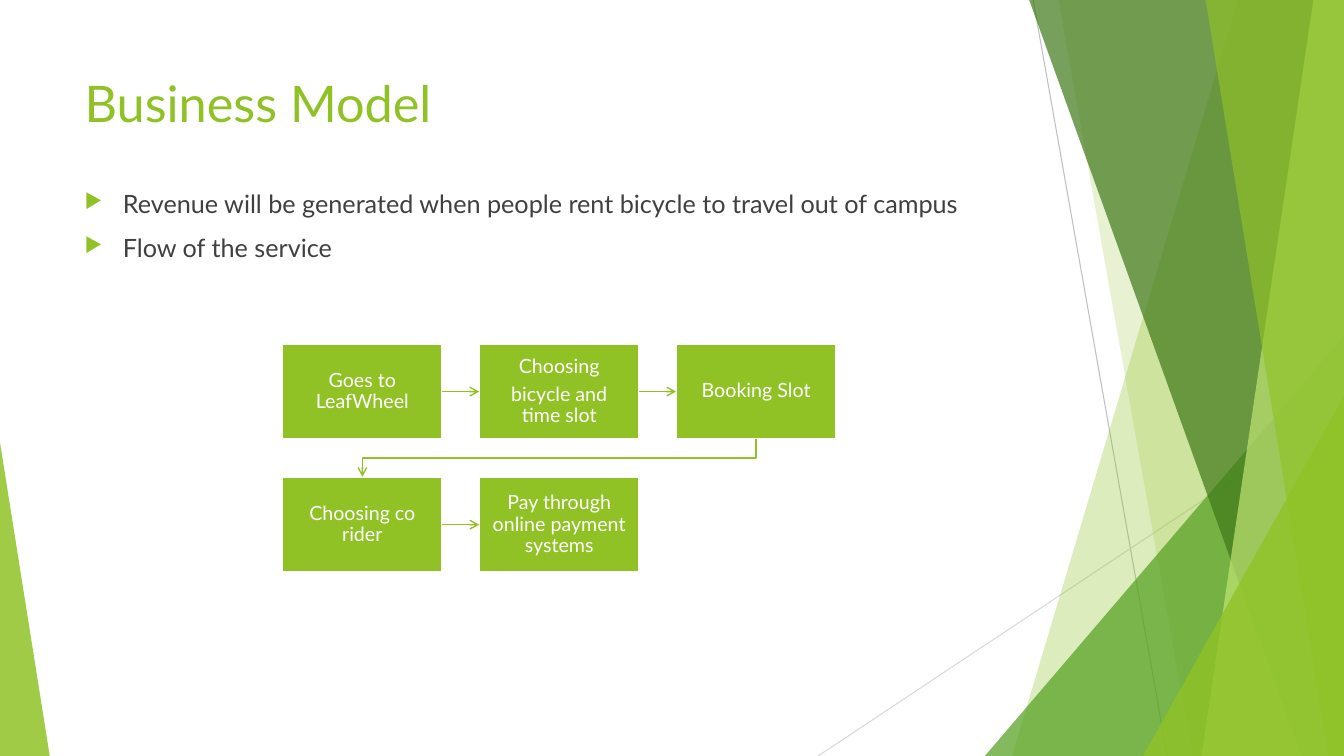
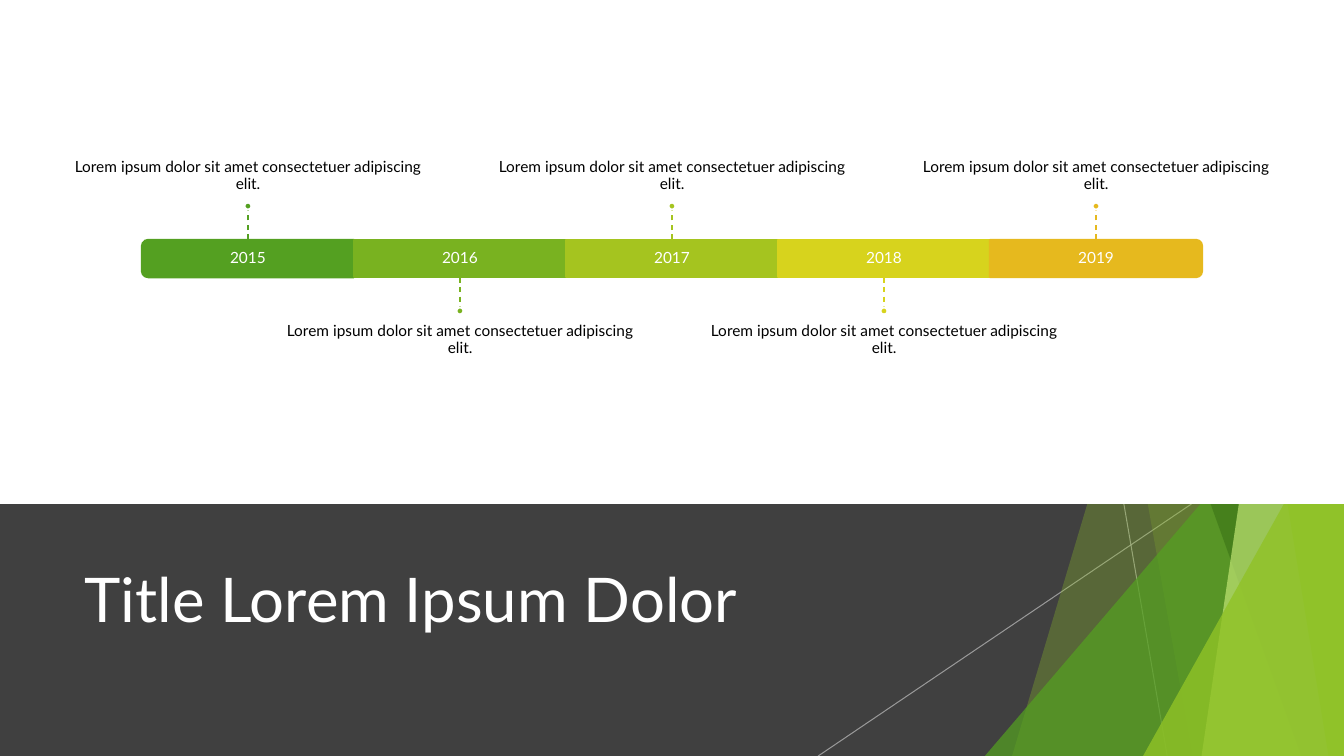
from dataclasses import dataclass
from typing import Optional, Sequence, Union

from lxml.etree import SubElement
from pptx import Presentation
from pptx.dml.color import RGBColor
from pptx.enum.dml import MSO_LINE_DASH_STYLE as Dash
from pptx.enum.shapes import MSO_CONNECTOR as Link, MSO_SHAPE as Form
from pptx.enum.text import MSO_ANCHOR as Anchor, MSO_AUTO_SIZE as AutoSize, PP_ALIGN as Align
from pptx.oxml.ns import qn
from pptx.util import Inches, Pt

SLIDE_WIDTH, SLIDE_HEIGHT = Inches(13.33), Inches(7.5)
COLUMNS, ROWS = 40, 22.5
TITLE_ONLY = 5
FONT = "Lato"

LIME = RGBColor(0x90, 0xC2, 0x26)
GREEN = RGBColor(0x54, 0xA0, 0x21)
FOREST = RGBColor(0x3F, 0x78, 0x19)
PALE_LIME = RGBColor(0xC0, 0xE4, 0x74)
LEAF = RGBColor(0x79, 0xB2, 0x20)
OLIVE = RGBColor(0xA5, 0xC4, 0x1F)
YELLOW = RGBColor(0xD7, 0xD3, 0x1D)
AMBER = RGBColor(0xE6, 0xB9, 0x1E)
CHARCOAL = RGBColor(0x40, 0x40, 0x40)
SILVER = RGBColor(0xBF, 0xBF, 0xBF)
MIST = RGBColor(0xD9, 0xD9, 0xD9)
WHITE = RGBColor(0xFF, 0xFF, 0xFF)
BLACK = RGBColor(0x00, 0x00, 0x00)


@dataclass(frozen=True)
class Band:
    top_column: float
    bottom_column: float
    color: RGBColor
    opacity: int


@dataclass(frozen=True)
class Wedge:
    left: float
    right: float
    top: float
    apex: int
    color: RGBColor
    opacity: int


@dataclass(frozen=True)
class Ray:
    start: tuple[float, float]
    end: tuple[float, float]
    color: RGBColor
    opacity: int = 100


@dataclass(frozen=True)
class Step:
    column: int
    row: int
    lines: tuple[str, ...]


@dataclass(frozen=True)
class Milestone:
    year: str
    color: RGBColor
    text: str = "Lorem ipsum dolor sit amet consectetuer adipiscing elit."


FACETS: tuple[Union[Band, Wedge], ...] = (
    Band(36.84, 30.12, LIME, 30),
    Band(31.5, 35.49, LIME, 20),
    Wedge(29.31, 40, 10, 1, GREEN, 72),
    Band(30.63, 38.73, FOREST, 70),
    Band(39.09, 35.76, PALE_LIME, 70),
    Band(35.88, 39.54, LIME, 65),
    Wedge(34.02, 40, 11.8, 1, LIME, 80),
)
CORNER = Wedge(0, 1.48, 13.17, 0, LIME, 85)
LIGHT_RAYS = (
    Ray((30.75, 0), (34.74, ROWS), SILVER),
    Ray((COLUMNS, 12.1), (24.35, ROWS), MIST),
)
DARK_RAYS = (
    Ray((33.45, 15), (34.74, ROWS), SILVER, 70),
    Ray((35.46, 15), (24.35, ROWS), SILVER, 70),
)
STEPS = (
    Step(0, 0, ("Goes to LeafWheel",)),
    Step(1, 0, ("Choosing", "bicycle and time slot")),
    Step(2, 0, ("Booking Slot",)),
    Step(0, 1, ("Choosing co rider",)),
    Step(1, 1, ("Pay through online payment systems",)),
)
MILESTONES = (
    Milestone("2015", GREEN),
    Milestone("2016", LEAF),
    Milestone("2017", OLIVE),
    Milestone("2018", YELLOW),
    Milestone("2019", AMBER),
)


def across(columns: float) -> int:
    return round(SLIDE_WIDTH * columns / COLUMNS)


def down(rows: float) -> int:
    return round(SLIDE_HEIGHT * rows / ROWS)


def area(left: float, top: float, width: float, height: float) -> tuple[int, int, int, int]:
    return across(left), down(top), across(width), down(height)


def set_opacity(shape, opacity: int) -> None:
    if opacity < 100:
        for color in list(shape.element.spPr.iter(qn("a:srgbClr"))):
            SubElement(color, qn("a:alpha"), val=str(opacity * 1000))


def paint(shape, fill: RGBColor, line: Optional[RGBColor] = None, opacity: int = 100):
    shape.shadow.inherit = False
    shape.fill.solid()
    shape.fill.fore_color.rgb = fill
    if line is None:
        shape.line.fill.background()
    else:
        shape.line.color.rgb = line
        shape.line.width = Pt(1.5)
    set_opacity(shape, opacity)
    return shape


def add_form(slide, form: Form, box: tuple[int, int, int, int], fill: RGBColor,
             line: Optional[RGBColor] = None, opacity: int = 100):
    return paint(slide.shapes.add_shape(form, *box), fill, line, opacity)


def add_line(slide, start: tuple[float, float], end: tuple[float, float], color: RGBColor,
             width: float, kind: Link = Link.STRAIGHT, arrow: bool = False):
    connector = slide.shapes.add_connector(
        kind, across(start[0]), down(start[1]), across(end[0]), down(end[1]))
    connector.line.color.rgb = color
    connector.line.width = Pt(width)
    if arrow:
        SubElement(connector.line._get_or_add_ln(), qn("a:tailEnd"), type="arrow")
    SubElement(connector.element.spPr, qn("a:effectLst"))
    return connector


def add_bullet(paragraph, color: RGBColor) -> None:
    properties = paragraph._p.get_or_add_pPr()
    properties.set("marL", str(Inches(0.38)))
    properties.set("indent", str(-Inches(0.38)))
    SubElement(SubElement(properties, qn("a:buClr")), qn("a:srgbClr"), val=str(color))
    SubElement(properties, qn("a:buSzPct"), val="80000")
    SubElement(properties, qn("a:buChar"), char="▶")


def write_text(shape, lines: Sequence[str], *, size: float, color: RGBColor,
               align: Align = Align.LEFT, anchor: Anchor = Anchor.TOP,
               insets: tuple[float, float, float, float] = (0.3, 0.15, 0.3, 0.15),
               spacing: float = 1, before: float = 0, after: float = 0,
               bullet: Optional[RGBColor] = None) -> None:
    frame = shape.text_frame
    frame.word_wrap = True
    frame.auto_size = AutoSize.NONE
    frame.vertical_anchor = anchor
    frame.margin_left, frame.margin_right = across(insets[0]), across(insets[2])
    frame.margin_top, frame.margin_bottom = down(insets[1]), down(insets[3])
    for index, line in enumerate(lines):
        paragraph = frame.add_paragraph() if index else frame.paragraphs[0]
        paragraph.alignment = align
        paragraph.line_spacing = spacing
        paragraph.space_before, paragraph.space_after = Pt(before), Pt(after)
        if bullet is not None:
            add_bullet(paragraph, bullet)
        run = paragraph.add_run()
        run.text = line
        run.font.name = FONT
        run.font.size = Pt(size)
        run.font.color.rgb = color


def write_label(shape, lines: Sequence[str], *, size: float, color: RGBColor = WHITE,
                anchor: Anchor = Anchor.MIDDLE,
                insets: tuple[float, float, float, float] = (0.27,) * 4) -> None:
    write_text(shape, lines, size=size, color=color, align=Align.CENTER, anchor=anchor,
               insets=insets, spacing=0.9, after=size * 0.35)


def add_title(slide, text: str, top: float, size: float, color: RGBColor, anchor: Anchor) -> None:
    title = slide.shapes.title
    title.left, title.top, title.width, title.height = area(2.22, top, 28.2, 4.32)
    title.element.getparent().append(title.element)
    write_text(title, [text], size=size, color=color, anchor=anchor)


def add_wedge(slide, wedge: Wedge) -> None:
    box = area(wedge.left, wedge.top, wedge.right - wedge.left, ROWS - wedge.top)
    triangle = add_form(slide, Form.ISOSCELES_TRIANGLE, box, wedge.color, opacity=wedge.opacity)
    triangle.adjustments[0] = wedge.apex


def add_band(slide, band: Band) -> None:
    builder = slide.shapes.build_freeform(across(band.top_column), 0)
    builder.add_line_segments([(SLIDE_WIDTH, 0), (SLIDE_WIDTH, SLIDE_HEIGHT),
                               (across(band.bottom_column), SLIDE_HEIGHT)], close=True)
    paint(builder.convert_to_shape(), band.color, opacity=band.opacity)


def add_facets(slide, rays: Sequence[Ray]) -> None:
    for ray in rays:
        set_opacity(add_line(slide, ray.start, ray.end, ray.color, 0.75), ray.opacity)
    for facet in FACETS:
        if isinstance(facet, Band):
            add_band(slide, facet)
        else:
            add_wedge(slide, facet)


def join(slide, first, first_side: int, second, second_side: int, kind: Link = Link.STRAIGHT):
    connector = add_line(slide, (0, 0), (1, 1), LIME, 1, kind, arrow=True)
    connector.begin_connect(first, first_side)
    connector.end_connect(second, second_side)
    return connector


def turn_downward(connector) -> None:
    left, top, width, height = connector.left, connector.top, connector.width, connector.height
    transform = connector.element.spPr.find(qn("a:xfrm"))
    transform.attrib.pop("flipH", None)
    transform.set("rot", "5400000")
    connector.left = left + (width - height) // 2
    connector.top = top + (height - width) // 2
    connector.width, connector.height = height, width


def add_flow(slide) -> None:
    boxes = []
    for step in STEPS:
        place = area(8.4 + 5.86 * step.column, 10.23 + 3.96 * step.row, 4.77, 2.85)
        box = add_form(slide, Form.RECTANGLE, place, LIME, WHITE)
        write_label(box, step.lines, size=14, insets=(0.33,) * 4)
        boxes.append(box)
    for index in range(len(STEPS) - 1):
        first, second = boxes[index:index + 2]
        if STEPS[index].row == STEPS[index + 1].row:
            join(slide, first, 3, second, 1)
        else:
            turn_downward(join(slide, first, 2, second, 0, Link.ELBOW))


def add_milestone(slide, index: int, milestone: Milestone) -> None:
    pitch, bar_top, bar_height, stem, dot = 6.31, 7.14, 1.11, 0.9, 0.21
    last = len(MILESTONES) - 1
    center = COLUMNS / 2 + (index - last / 2) * pitch
    bar_box = area(center - pitch / 2, bar_top, pitch, bar_height)
    rounded = index in (0, last)
    if rounded:
        upright = area(center - bar_height / 2, bar_top + (bar_height - pitch) / 2, bar_height, pitch)
        bar = add_form(slide, Form.ROUND_2_SAME_RECTANGLE, upright, milestone.color, milestone.color)
        bar.rotation = 90 if index else 270
        label = slide.shapes.add_textbox(*bar_box)
    else:
        bar = label = add_form(slide, Form.RECTANGLE, bar_box, milestone.color, milestone.color)
    write_label(label, [milestone.year], size=11)

    above = index % 2 == 0
    edge = bar_top if above else bar_top + bar_height
    tip = edge - stem if above else edge + stem
    text_top = 2.1 if above else 9.36
    caption = slide.shapes.add_textbox(*area(center - 5.26, text_top, 10.53, 3.9))
    write_label(caption, [milestone.text], size=11, color=BLACK,
                anchor=Anchor.BOTTOM if above else Anchor.TOP,
                insets=(0, 0, 0, 0.27) if above else (0, 0.27, 0, 0))
    line = add_line(slide, (center, edge), (center, tip), milestone.color, 1)
    line.line.dash_style = Dash.DASH
    if not rounded:
        line.begin_connect(bar, 0 if above else 2)
    dot_top = tip - dot if above else tip
    add_form(slide, Form.OVAL, area(center - dot / 2, dot_top, dot, dot), milestone.color, WHITE)


def build_business_model(presentation) -> None:
    slide = presentation.slides.add_slide(presentation.slide_layouts[TITLE_ONLY])
    add_facets(slide, LIGHT_RAYS)
    add_wedge(slide, CORNER)
    add_title(slide, "Business Model", 2.01, 36, LIME, Anchor.TOP)
    body = slide.shapes.add_textbox(*area(2.22, 5.46, 28.2, 14.37))
    write_text(body, ["Revenue will be generated when people rent bicycle to travel out of campus",
                      "Flow of the service"], size=18, color=CHARCOAL, before=10, bullet=LIME)
    add_flow(slide)


def build_timeline(presentation) -> None:
    slide = presentation.slides.add_slide(presentation.slide_layouts[TITLE_ONLY])
    add_form(slide, Form.RECTANGLE, area(0, 15, COLUMNS, 7.5), CHARCOAL)
    add_facets(slide, DARK_RAYS)
    add_title(slide, "Title Lorem Ipsum Dolor", 15.63, 44, WHITE, Anchor.MIDDLE)
    add_form(slide, Form.RECTANGLE, area(0, 0, COLUMNS, 15), WHITE)
    for index, milestone in enumerate(MILESTONES):
        add_milestone(slide, index, milestone)


def main() -> None:
    presentation = Presentation()
    presentation.slide_width, presentation.slide_height = SLIDE_WIDTH, SLIDE_HEIGHT
    build_business_model(presentation)
    build_timeline(presentation)
    presentation.save("out.pptx")


if __name__ == "__main__":
    main()
